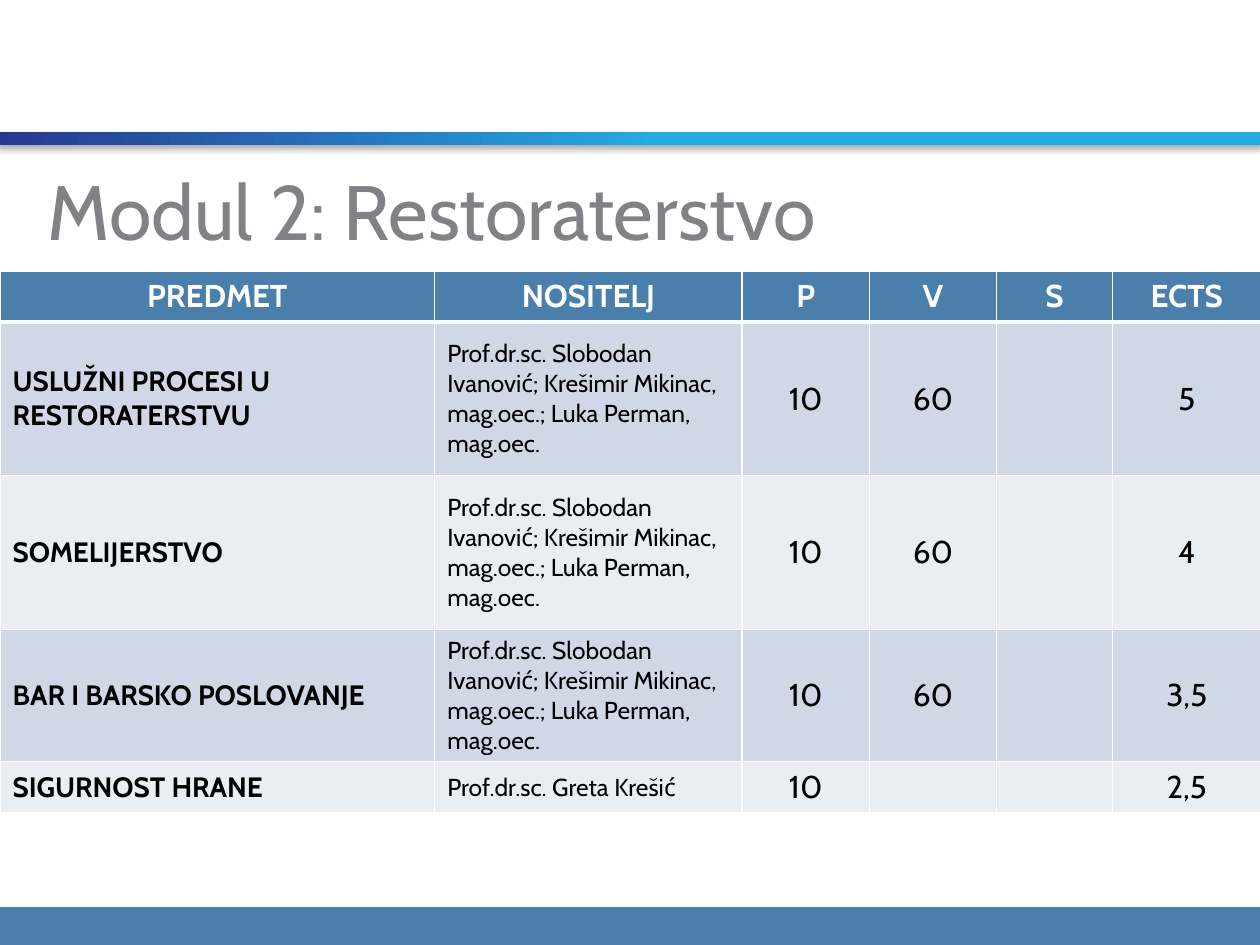
from dataclasses import dataclass

from lxml import etree
from pptx import Presentation
from pptx.dml.color import RGBColor
from pptx.enum import shapes, text
from pptx.oxml import ns
from pptx.util import Inches, Pt


@dataclass(frozen=True)
class Theme:
    font: str = "Cabin"
    blue: str = "4A7FAC"
    navy: str = "283891"
    sky: str = "25AAE1"
    grey: str = "818285"
    white: str = "FFFFFF"
    black: str = "000000"
    bands: tuple = ("D0D8E8", "E9EDF4")
    title_size: int = 44
    subject_size: int = 16
    teacher_size: int = 14
    body_size: int = 18


theme = Theme()


def write(frame, words, size, color, bold=False, align=text.PP_ALIGN.LEFT):
    para = frame.paragraphs[0]
    para.alignment = align
    span = para.add_run()
    span.text = words
    span.font.name = theme.font
    span.font.size = Pt(size)
    span.font.bold = bold
    span.font.color.rgb = RGBColor.from_string(color)


def add_child(parent, tag, **attributes):
    return etree.SubElement(parent, ns.qn(tag), attributes)


deck = Presentation()
deck.slide_width, deck.slide_height = Inches(10), Inches(7.5)
page = deck.slides.add_slide(deck.slide_layouts[5])

# Title
title = page.shapes.title
title.left, title.top = Inches(0.28), Inches(1.23)
title.width, title.height = Inches(9.45), Inches(0.87)
title.text_frame.auto_size = text.MSO_AUTO_SIZE.NONE
title.text_frame.vertical_anchor = text.MSO_ANCHOR.MIDDLE
write(title.text_frame, "Modul 2: Restoraterstvo", theme.title_size, theme.grey)

# Footer band and header stripe, each with a soft shadow below
bars = []
for top, height in ((7.2, 0.3), (1.05, 0.1)):
    bar = page.shapes.add_shape(
        shapes.MSO_SHAPE.RECTANGLE,
        Inches(-0.02), Inches(top), Inches(10.03), Inches(height))
    bar.line.fill.background()
    bar.shadow.inherit = False
    effects = bar._element.spPr.find(ns.qn("a:effectLst"))
    shadow = add_child(effects, "a:outerShdw", blurRad=str(Pt(3.5)),
                       dist=str(Pt(2.2)), dir="5400000", rotWithShape="0")
    shade = add_child(shadow, "a:srgbClr", val=theme.black)
    add_child(shade, "a:alpha", val="32000")
    bars.append(bar)

footer, stripe = bars
footer.fill.solid()
footer.fill.fore_color.rgb = RGBColor.from_string(theme.blue)
stripe.fill.gradient()
stripe.fill.gradient_angle = 0
for stop, color, position in zip(stripe.fill.gradient_stops,
                                 (theme.navy, theme.sky), (0, 0.52)):
    stop.color.rgb = RGBColor.from_string(color)
    stop.position = position

# Course table
team = ("Prof.dr.sc. Slobodan Ivanović; Krešimir Mikinac, mag.oec.; "
        "Luka Perman, mag.oec.")
courses = [
    ("PREDMET", "NOSITELJ", "P", "V", "S", "ECTS"),
    ("USLUŽNI PROCESI U RESTORATERSTVU", team, "10", "60", "", "5"),
    ("SOMELIJERSTVO", team, "10", "60", "", "4"),
    ("BAR I BARSKO POSLOVANJE", team, "10", "60", "", "3,5"),
    ("SIGURNOST HRANE", "Prof.dr.sc. Greta Krešić", "10", "", "", "2,5"),
]
widths = (3.45, 2.44, 1.01, 1.01, 0.92, 1.18)
heights = (0.4, 1.22, 1.22, 1.05, 0.4)
table = page.shapes.add_table(
    len(heights), len(widths), Inches(0), Inches(2.15),
    Inches(sum(widths)), Inches(sum(heights))).table
for column, width in zip(table.columns, widths):
    column.width = Inches(width)
for row, height in zip(table.rows, heights):
    row.height = Inches(height)

sizes = (theme.subject_size, theme.teacher_size) + (theme.body_size,) * 4
for r, course in enumerate(courses):
    header = r == 0
    for c, words in enumerate(course):
        cell = table.cell(r, c)

        # White rules, thicker between header and body
        properties = cell._tc.get_or_add_tcPr()
        for side in "LRTB":
            thick = (r, side) in ((0, "B"), (1, "T"))
            rule = add_child(properties, f"a:ln{side}", w=str(Pt(3 if thick else 1)))
            add_child(add_child(rule, "a:solidFill"), "a:srgbClr", val=theme.white)

        cell.fill.solid()
        cell.fill.fore_color.rgb = RGBColor.from_string(
            theme.blue if header else theme.bands[(r - 1) % 2])
        cell.vertical_anchor = (
            text.MSO_ANCHOR.TOP if header else text.MSO_ANCHOR.MIDDLE)
        if words:
            write(cell.text_frame, words,
                  theme.body_size if header else sizes[c],
                  theme.white if header else theme.black,
                  bold=header or c == 0,
                  align=text.PP_ALIGN.CENTER if header or c > 1
                  else text.PP_ALIGN.LEFT)

deck.save("out.pptx")
